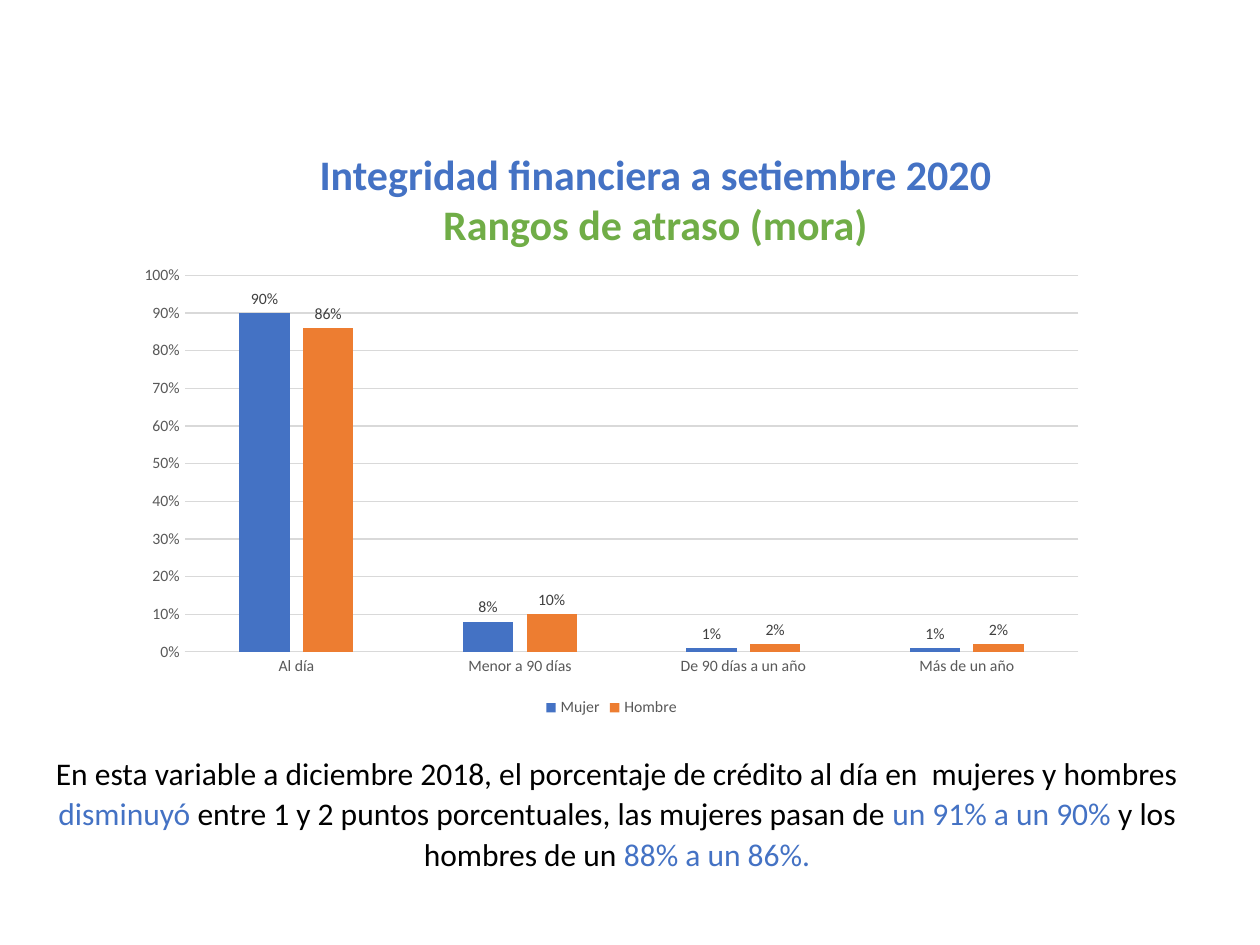
from dataclasses import dataclass

import pptx
import pptx.chart.data
import pptx.dml.color
import pptx.enum.chart
import pptx.enum.text
import pptx.util

EMU_PER_PX = 914400 / 126
FONT = "Calibri"
COLORS = {
    "blue": "4472C4",
    "green": "70AD47",
    "orange": "ED7D31",
    "black": "000000",
    "axis_text": "595959",
    "label_text": "404040",
    "grid": "D9D9D9",
}


@dataclass
class Box:
    left: int
    top: int
    width: int
    height: int

    def emu(self) -> list[int]:
        return [px(n) for n in (self.left, self.top, self.width, self.height)]


@dataclass
class TextRun:
    text: str
    color: str


@dataclass
class Series:
    name: str
    values: tuple[float, ...]
    color: str


TITLE = [
    [TextRun("Integridad financiera a setiembre 2020", "blue")],
    [TextRun("Rangos de atraso (mora)", "green")],
]
COMMENT = [[
    TextRun("En esta variable a diciembre 2018, el porcentaje de crédito al día en  mujeres y hombres ", "black"),
    TextRun("disminuyó ", "blue"),
    TextRun("entre 1 y 2 puntos porcentuales, las mujeres pasan de ", "black"),
    TextRun("un 91% a un 90% ", "blue"),
    TextRun("y los hombres de un ", "black"),
    TextRun("88% a un 86%.", "blue"),
]]
CATEGORIES = ["Al día", "Menor a 90 días", "De 90 días a un año", "Más de un año"]
SERIES = [
    Series("Mujer", (0.9, 0.08, 0.01, 0.01), "blue"),
    Series("Hombre", (0.86, 0.1, 0.02, 0.02), "orange"),
]


def px(length: int) -> int:
    return round(length * EMU_PER_PX)


def rgb(name: str) -> pptx.dml.color.RGBColor:
    return pptx.dml.color.RGBColor.from_string(COLORS[name])


def style_font(font, size: int, color: str, bold: bool = False) -> None:
    font.name = FONT
    font.size = pptx.util.Pt(size)
    font.bold = bold
    font.color.rgb = rgb(color)


def style_line(line, color: str) -> None:
    line.color.rgb = rgb(color)
    line.width = pptx.util.Pt(0.75)


def add_text(slide, box: Box, paragraphs: list[list[TextRun]], size: int, bold: bool = False,
             line_spacing: float = 1.0, space_after: int = 0) -> None:
    frame = slide.shapes.add_textbox(*box.emu()).text_frame
    frame.word_wrap = True
    frame.auto_size = pptx.enum.text.MSO_AUTO_SIZE.SHAPE_TO_FIT_TEXT
    for index, runs in enumerate(paragraphs):
        paragraph = frame.add_paragraph() if index else frame.paragraphs[0]
        paragraph.alignment = pptx.enum.text.PP_ALIGN.CENTER
        paragraph.line_spacing = line_spacing
        paragraph.space_after = pptx.util.Pt(space_after)
        for item in runs:
            run = paragraph.add_run()
            run.text = item.text
            style_font(run.font, size, item.color, bold)


def add_arrears_chart(slide, box: Box) -> None:
    data = pptx.chart.data.CategoryChartData(number_format="0%")
    data.categories = CATEGORIES
    for series in SERIES:
        data.add_series(series.name, series.values)
    chart = slide.shapes.add_chart(
        pptx.enum.chart.XL_CHART_TYPE.COLUMN_CLUSTERED, *box.emu(), data).chart
    style_font(chart.font, 10, "black")
    chart.has_title = False

    # Legend
    chart.has_legend = True
    chart.legend.position = pptx.enum.chart.XL_LEGEND_POSITION.BOTTOM
    chart.legend.include_in_layout = False
    style_font(chart.legend.font, 9, "axis_text")

    # Axes
    for axis in (chart.category_axis, chart.value_axis):
        axis.major_tick_mark = pptx.enum.chart.XL_TICK_MARK.NONE
        axis.minor_tick_mark = pptx.enum.chart.XL_TICK_MARK.NONE
        style_font(axis.tick_labels.font, 9, "axis_text")
    style_line(chart.category_axis.format.line, "grid")
    value_axis = chart.value_axis
    value_axis.minimum_scale = 0
    value_axis.maximum_scale = 1
    value_axis.major_unit = 0.1
    value_axis.format.line.fill.background()
    value_axis.has_major_gridlines = True
    style_line(value_axis.major_gridlines.format.line, "grid")
    value_axis.tick_labels.number_format = "0%"
    value_axis.tick_labels.number_format_is_linked = False

    # Columns and their labels
    plot = chart.plots[0]
    plot.gap_width = 219
    plot.overlap = -27
    plot.vary_by_categories = False
    for columns, series in zip(plot.series, SERIES):
        columns.invert_if_negative = False
        columns.format.fill.solid()
        columns.format.fill.fore_color.rgb = rgb(series.color)
        labels = columns.data_labels
        labels.show_value = True
        labels.position = pptx.enum.chart.XL_LABEL_POSITION.OUTSIDE_END
        labels.number_format = "0%"
        labels.number_format_is_linked = False
        style_font(labels.font, 9, "label_text")


def main() -> None:
    presentation = pptx.Presentation()
    presentation.slide_width = px(1260)
    presentation.slide_height = px(945)
    slide = presentation.slides.add_slide(presentation.slide_layouts[6])

    add_text(slide, Box(292, 142, 727, 115), TITLE, size=24, bold=True)
    add_arrears_chart(slide, Box(125, 257, 973, 465))
    add_text(slide, Box(42, 745, 1150, 134), COMMENT, size=18, line_spacing=1.07, space_after=8)

    presentation.save("out.pptx")


if __name__ == "__main__":
    main()
